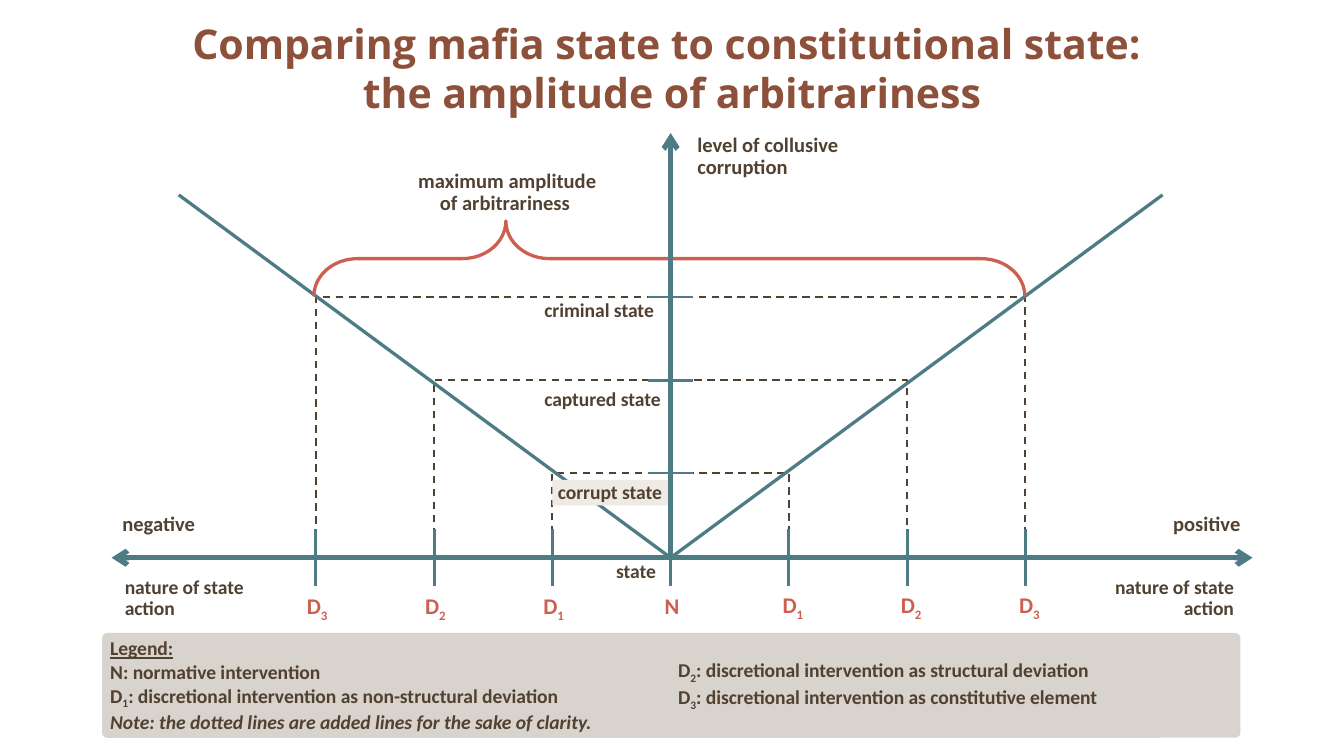
from lxml.etree import SubElement
from pptx import Presentation
from pptx.dml.color import RGBColor
from pptx.enum.dml import MSO_LINE
from pptx.enum.shapes import MSO_CONNECTOR, MSO_SHAPE
from pptx.enum.text import MSO_ANCHOR, MSO_AUTO_SIZE, PP_ALIGN
from pptx.oxml.ns import qn
from pptx.util import Inches, Pt

BROWN, RED, TEAL, TITLE = "504131", "CD5F50", "4D7C85", "8D503B"
LEFT, CENTER, RIGHT = PP_ALIGN.LEFT, PP_ALIGN.CENTER, PP_ALIGN.RIGHT
rgb = RGBColor.from_string

presentation = Presentation()
presentation.slide_width = Inches(10)
presentation.slide_height = presentation.slide_width * 9 // 16
slide = presentation.slides.add_slide(presentation.slide_layouts[5])
shapes = slide.shapes

origin_x, origin_y, column = 4.99, 4.15, 0.88
level_heights = {1: 0.63, 2: 1.32, 3: 1.94}


def write(paragraph, text, size, color=BROWN, align=LEFT, font="Calibri", spacing=None):
    for index, part in enumerate(text.split("_")):
        if index:
            subscript = paragraph.add_run()
            subscript.text = part[0]
            subscript._r.get_or_add_rPr().set("baseline", "-25000")
            part = part[1:]
        if part:
            paragraph.add_run().text = part
    paragraph.alignment = align
    paragraph.line_spacing = spacing
    paragraph.font.name, paragraph.font.size, paragraph.font.bold = font, Pt(size), True
    paragraph.font.color.rgb = rgb(color)


def add_line(start_x, start_y, end_x, end_y, width, arrows=()):
    line = shapes.add_connector(MSO_CONNECTOR.STRAIGHT, Inches(start_x), Inches(start_y),
                                Inches(end_x), Inches(end_y))
    line.line.color.rgb = rgb(TEAL)
    line.line.width = Pt(width)
    for arrow in arrows:
        SubElement(line.line._get_or_add_ln(), qn(f"a:{arrow}"), type="arrow")
    SubElement(line._element.spPr, qn("a:effectLst"))
    return line


title = shapes.title
title.left, title.top, title.width, title.height = map(Inches, (0.12, 0, 9.76, 1.01))
title.text_frame.auto_size = MSO_AUTO_SIZE.NONE
title.text_frame.vertical_anchor = MSO_ANCHOR.MIDDLE
title_paragraph = title.text_frame.paragraphs[0]
title_paragraph.text = "Comparing mafia state to constitutional state: \nthe amplitude of arbitrariness"
write(title_paragraph, "", 22, TITLE, CENTER, "Open Sans")

legend_panel = shapes.add_shape(MSO_SHAPE.ROUNDED_RECTANGLE, Inches(0.76), Inches(4.71),
                                Inches(8.47), Inches(0.78))
legend_panel.adjustments[0] = 0.05
legend_panel.shadow.inherit = False
legend_panel.fill.solid()
legend_panel.fill.fore_color.rgb = rgb("B3A99D")
SubElement(legend_panel._element.spPr.find(f".//{qn('a:srgbClr')}"), qn("a:alpha"), val="50000")
legend_panel.line.fill.background()

for step, height in level_heights.items():
    guide = shapes.add_shape(MSO_SHAPE.RECTANGLE, Inches(origin_x - step * column),
                             Inches(origin_y - height), Inches(2 * step * column), Inches(height))
    guide.shadow.inherit = False
    guide.fill.background()
    guide.line.color.rgb = rgb(BROWN)
    guide.line.width = Pt(1)
    guide.line.dash_style = MSO_LINE.DASH

labels = []
for step in range(-3, 4):
    x = origin_x + step * column
    add_line(x, origin_y - 0.21, x, origin_y + 0.21, 1.5)
    name = f"D_{abs(step)}" if step else "N"
    nudge = 0.03 if step > 0 else 0.01
    labels.append((name, x - 0.5 + nudge, 4.35 if step > 0 else 4.36, 1, 0.4, 12, RED, CENTER, 0.1, 0.05, None))

for end_x in (1.33, 8.65):
    add_line(origin_x, origin_y, end_x, 1.45, 1.75).begin_connect(guide, 2)
for height in level_heights.values():
    add_line(origin_x - 0.17, origin_y - height, origin_x + 0.17, origin_y - height, 1.5)

labels += [
    ("captured state", 4.01, 2.88, 0.97, 0.27, 10.5, BROWN, LEFT, 0.04, 0, None),
    ("state", 4.45, 4.11, 0.53, 0.31, 10.5, BROWN, RIGHT, 0.1, 0.05, None),
    ("criminal state", 4.01, 2.22, 1.03, 0.17, 10.5, BROWN, LEFT, 0.04, 0, None),
    ("corrupt state", 4.11, 3.57, 0.88, 0.19, 10.5, BROWN, LEFT, 0.04, 0, None),
    ("level of collusive corruption", 5.09, 0.95, 1.34, 0.46, 11, BROWN, LEFT, 0.1, 0.05, 0.9),
    ("nature of state action", 8.15, 4.25, 1.13, 0.45, 10.5, BROWN, RIGHT, 0.1, 0.05, 0.9),
    ("positive", 8.51, 3.75, 0.8, 0.37, 11, BROWN, RIGHT, 0.08, 0.05, None),
    ("negative", 0.83, 3.75, 0.85, 0.35, 11, BROWN, LEFT, 0.08, 0.05, None),
    ("nature of state action", 0.83, 4.25, 1.22, 0.45, 10.5, BROWN, LEFT, 0.1, 0.05, 0.9),
    ("maximum amplitude of arbitrariness ", 2.95, 1.22, 1.65, 0.43, 11, BROWN, CENTER, 0.1, 0.05, 0.9),
]
for text, left, top, width, height, size, color, align, side, edge, spacing in labels:
    box = shapes.add_textbox(Inches(left), Inches(top), Inches(width), Inches(height))
    frame = box.text_frame
    frame.word_wrap = True
    frame.margin_left = frame.margin_right = Inches(side)
    frame.margin_top = frame.margin_bottom = Inches(edge)
    write(frame.paragraphs[0], text, size, color, align, spacing=spacing)
    if text == "corrupt state":
        box.fill.solid()
        box.fill.fore_color.rgb = rgb("EFEAE4")

brace = shapes.add_shape(MSO_SHAPE.LEFT_BRACE, Inches(4.7), Inches(-0.72), Inches(0.56), Inches(5.29))
brace.rotation = 90
brace.adjustments[0], brace.adjustments[1] = 0.58, 0.73
brace.shadow.inherit = False
brace.fill.background()
brace.line.color.rgb = rgb(RED)
brace.line.width = Pt(1.75)

add_line(0.83, origin_y, 9.32, origin_y, 2.75, ("headEnd", "tailEnd"))
add_line(origin_x, origin_y, origin_x, 0.99, 2.75, ("tailEnd",)).begin_connect(guide, 2)

legend_columns = [
    ["Legend:", "N: normative intervention",
     "D_1: discretional intervention as non-structural deviation",
     "Note: the dotted lines are added lines for the sake of clarity."],
    ["D_2: discretional intervention as structural deviation",
     "D_3: discretional intervention as constitutive element"],
]
legend = shapes.add_table(1, 2, Inches(0.77), Inches(4.7), Inches(8.45), Inches(0.78)).table
legend.first_row = legend.horz_banding = False
legend._tbl.tblPr.find(qn("a:tableStyleId")).text = "{2D5ABB26-0587-4C30-8999-92F81FD0307C}"
for cell, lines in zip(legend.rows[0].cells, legend_columns):
    cell.fill.background()
    cell.vertical_anchor = MSO_ANCHOR.MIDDLE
    cell.margin_left = cell.margin_right = Inches(0.05)
    cell.margin_top = cell.margin_bottom = Inches(0.04)
    for index, text in enumerate(lines):
        paragraph = cell.text_frame.add_paragraph() if index else cell.text_frame.paragraphs[0]
        write(paragraph, text, 10.5)
        paragraph.font.underline = text == "Legend:"
        paragraph.font.italic = text.startswith("Note")

presentation.save("out.pptx")
